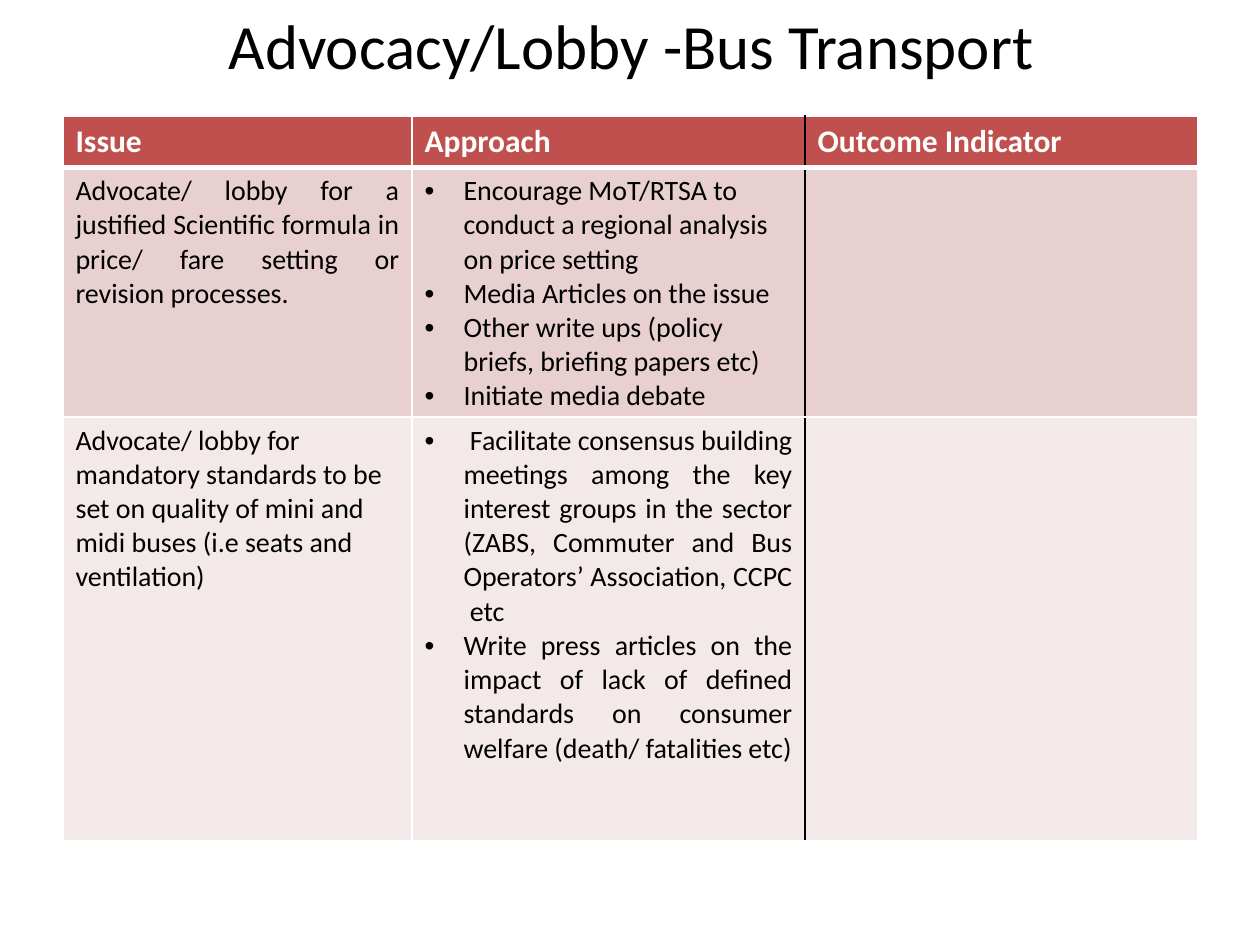
import pptx
import pptx.dml.color
import pptx.enum.text
import pptx.oxml.ns
import pptx.util
from lxml import etree

Inches = pptx.util.Inches
RGBColor = pptx.dml.color.RGBColor
ALIGN = pptx.enum.text.PP_ALIGN
ANCHOR = pptx.enum.text.MSO_ANCHOR
qn = pptx.oxml.ns.qn

WHITE = RGBColor(0xFF, 0xFF, 0xFF)
BLACK = RGBColor(0x00, 0x00, 0x00)
RED = RGBColor(0xC0, 0x50, 0x4D)
ROSE = RGBColor(0xE8, 0xD0, 0xD0)
PALE_ROSE = RGBColor(0xF4, 0xE9, 0xE9)

FONT = "Calibri"
BULLET_INDENT = Inches(0.31)
COLUMN_WIDTHS = (2.77, 3.12, 3.12)
ROW_HEIGHTS = (0.41, 1.98, 3.36)
ROW_FILLS = (RED, ROSE, PALE_ROSE)

HEADERS = ("Issue", "Approach", "Outcome Indicator")
# Each row: issue, its alignment, approaches, their alignment
ISSUES = (
    (
        "Advocate/ lobby for a justified Scientific formula in price/ fare "
        "setting or revision processes.",
        ALIGN.JUSTIFY,
        (
            "Encourage MoT/RTSA to conduct a regional analysis on price setting",
            "Media Articles on the issue",
            "Other write ups (policy briefs, briefing papers etc)",
            "Initiate media debate",
        ),
        ALIGN.LEFT,
    ),
    (
        "Advocate/ lobby for mandatory standards to be set on quality of mini "
        "and midi buses (i.e seats and ventilation)",
        ALIGN.LEFT,
        (
            " Facilitate consensus building meetings among the key interest "
            "groups in the sector (ZABS, Commuter and Bus Operators’ "
            "Association, CCPC  etc",
            "Write press articles on the impact of lack of defined standards "
            "on consumer welfare (death/ fatalities etc)",
        ),
        ALIGN.JUSTIFY,
    ),
)


def write_text(frame, *lines, size=16, color=BLACK, bold=False,
               align=ALIGN.LEFT, bullet=False):
    """Write one paragraph per line, all in the same format."""
    for index, line in enumerate(lines):
        para = frame.add_paragraph() if index else frame.paragraphs[0]
        para.alignment = align
        span = para.add_run()
        span.text = line
        span.font.name = FONT
        span.font.size = pptx.util.Pt(size)
        span.font.bold = bold
        span.font.color.rgb = color
        if bullet:
            add_bullet(para)


def add_bullet(para):
    properties = para._p.get_or_add_pPr()
    properties.set("marL", str(BULLET_INDENT))
    properties.set("indent", str(-BULLET_INDENT))
    etree.SubElement(properties, qn("a:buFont"), typeface="Arial")
    etree.SubElement(properties, qn("a:buChar"), char="•")


def set_border(cell, side, color, width):
    line = etree.SubElement(cell._tc.get_or_add_tcPr(), qn("a:ln" + side),
                            w=str(pptx.util.Pt(width)))
    fill = etree.SubElement(line, qn("a:solidFill"))
    etree.SubElement(fill, qn("a:srgbClr"), val=str(color))


def style_cell(cell, row, column):
    """Set borders and fill; a black rule divides the last two columns."""
    set_border(cell, "L", BLACK if column == 2 else WHITE, 1)
    set_border(cell, "R", BLACK if column == 1 else WHITE, 1)
    set_border(cell, "T", WHITE, 3 if row == 1 else 1)
    set_border(cell, "B", WHITE, 3 if row == 0 else 1)
    cell.fill.solid()
    cell.fill.fore_color.rgb = ROW_FILLS[row]


def add_title(page, text):
    box = page.shapes.add_textbox(Inches(0.51), Inches(-0.27),
                                  Inches(9), Inches(1.25))
    frame = box.text_frame
    frame.word_wrap = True
    frame.vertical_anchor = ANCHOR.MIDDLE
    write_text(frame, text, size=36, align=ALIGN.CENTER)


def add_issue_table(page):
    table = page.shapes.add_table(
        len(ROW_HEIGHTS), len(COLUMN_WIDTHS), Inches(0.5), Inches(0.92),
        Inches(sum(COLUMN_WIDTHS)), Inches(sum(ROW_HEIGHTS))).table
    for column, width in zip(table.columns, COLUMN_WIDTHS):
        column.width = Inches(width)
    for row, height in zip(table.rows, ROW_HEIGHTS):
        row.height = Inches(height)
    for row in range(len(ROW_HEIGHTS)):
        for column in range(len(COLUMN_WIDTHS)):
            style_cell(table.cell(row, column), row, column)

    # Header row
    for column, header in enumerate(HEADERS):
        write_text(table.cell(0, column).text_frame, header,
                   size=18, color=WHITE, bold=True)

    # Issues with their approaches
    for row, (issue, issue_align, approaches, align) in enumerate(ISSUES, 1):
        write_text(table.cell(row, 0).text_frame, issue, align=issue_align)
        write_text(table.cell(row, 1).text_frame, *approaches,
                   align=align, bullet=True)


def main():
    deck = pptx.Presentation()
    deck.slide_width, deck.slide_height = Inches(10), Inches(7.5)
    page = deck.slides.add_slide(deck.slide_layouts[6])
    add_title(page, "Advocacy/Lobby -Bus Transport")
    add_issue_table(page)
    deck.save("out.pptx")


if __name__ == "__main__":
    main()
